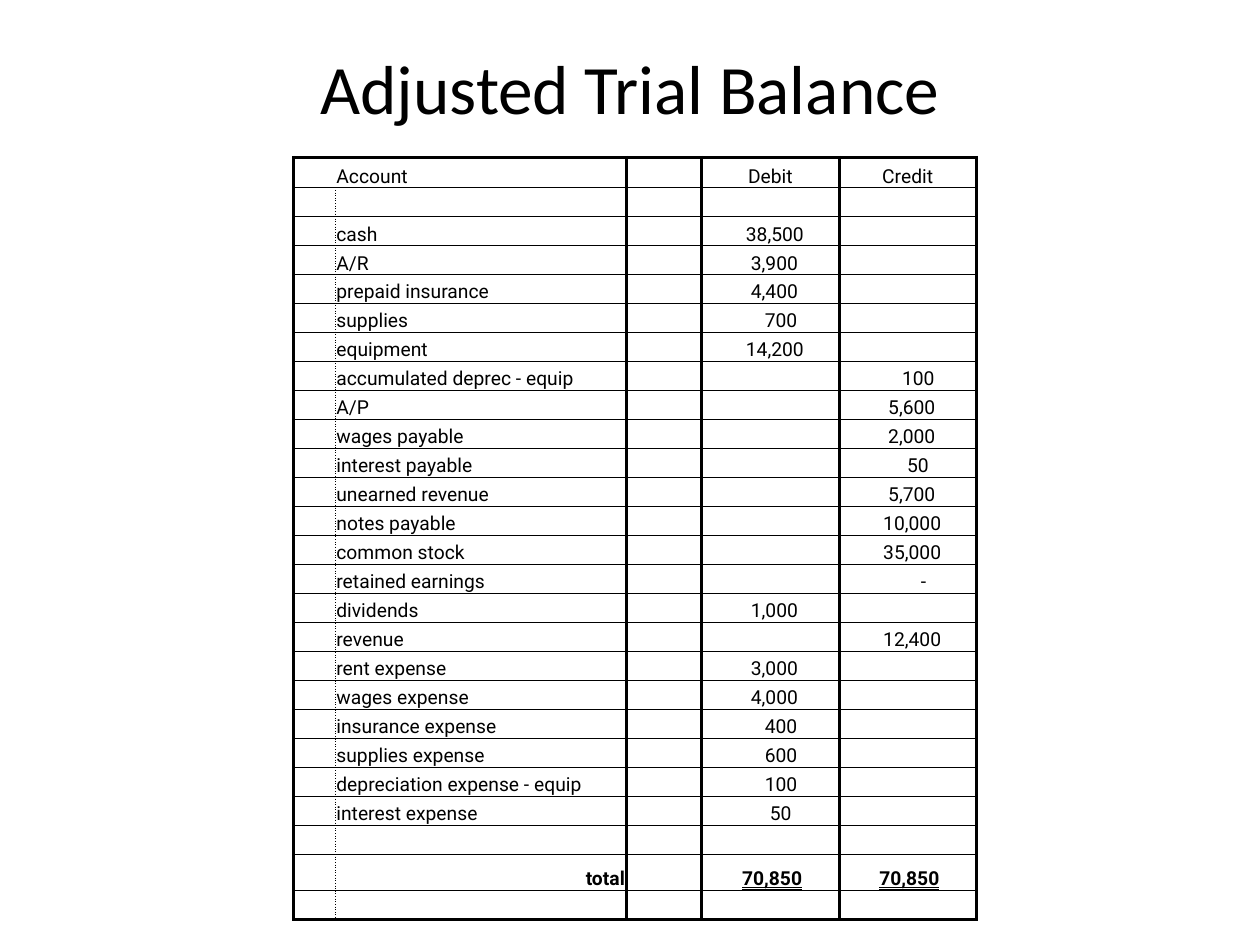
from lxml.etree import SubElement
from pptx import Presentation
from pptx.dml.color import RGBColor
from pptx.enum.text import MSO_ANCHOR, MSO_UNDERLINE, PP_ALIGN
from pptx.oxml.ns import qn
from pptx.util import Inches, Pt

HUES = {"ink": "000000"}
FONTS = {"title": "Calibri", "table": "Roboto"}
WIDTHS = [3.3, 23.1, 6, 10.9, 10.9]
LEADS = {6: 3.5, 5: 3.9, 3: 5, 2: 5.4, 1: 6.5}
TOTAL_LEAD = 3.1
HEAVY, THIN, DOTS, NONE = (2, "solid"), (0.5, "solid"), (0.5, "sysDot"), None
ITEMS = [
    ("cash", "38,500", ""),
    ("A/R", "3,900", ""),
    ("prepaid insurance", "4,400", ""),
    ("supplies", "700", ""),
    ("equipment", "14,200", ""),
    ("accumulated deprec - equip", "", "100"),
    ("A/P", "", "5,600"),
    ("wages payable", "", "2,000"),
    ("interest payable", "", "50"),
    ("unearned revenue", "", "5,700"),
    ("notes payable", "", "10,000"),
    ("common stock", "", "35,000"),
    ("retained earnings", "", "-"),
    ("dividends", "1,000", ""),
    ("revenue", "", "12,400"),
    ("rent expense", "3,000", ""),
    ("wages expense", "4,000", ""),
    ("insurance expense", "400", ""),
    ("supplies expense", "600", ""),
    ("depreciation expense - equip", "100", ""),
    ("interest expense", "50", ""),
]
BLANK = ("", "", "")
ROWS = [("Account", "Debit", "Credit"), BLANK, *ITEMS, BLANK, ("total", "70,850", "70,850"), BLANK]
TOTAL = len(ROWS) - 2
HEIGHTS = [2.4] + [2.3] * (TOTAL - 1) + [2.9, 2.3]


class Sheet:
    """Hold the style and the slide, laid out on a grid of 100 columns and 75 rows."""

    def __init__(self, deck):
        self.slide = deck.slides.add_slide(deck.slide_layouts[6])
        self.col = deck.slide_width / 100
        self.row = deck.slide_height / 75

    def place(self, left, top, width, height):
        return [int(n) for n in (left * self.col, top * self.row, width * self.col, height * self.row)]

    def text(self, para, words, font, size, bold=False):
        run = para.add_run()
        run.text = words
        run.font.name, run.font.size, run.font.bold = FONTS[font], Pt(size), bold
        run.font.color.rgb = RGBColor.from_string(HUES["ink"])
        return run

    def title(self, words, *spot):
        frame = self.slide.shapes.add_textbox(*self.place(*spot)).text_frame
        frame.word_wrap = True
        frame.vertical_anchor = MSO_ANCHOR.MIDDLE
        para = frame.paragraphs[0]
        para.alignment = PP_ALIGN.CENTER
        self.text(para, words, "title", 39.6)

    def rule(self, cell, side, style):
        line = SubElement(cell._tc.get_or_add_tcPr(), qn(f"a:ln{side}"))
        if style is NONE:
            SubElement(line, qn("a:noFill"))
            return
        width, dash = style
        line.set("w", str(Pt(width)))
        fill = SubElement(line, qn("a:solidFill"))
        SubElement(fill, qn("a:srgbClr"), val=HUES["ink"])
        SubElement(line, qn("a:prstDash"), val=dash)

    def frame(self, cell, row, col):
        split = DOTS if row else NONE
        self.rule(cell, "L", split if col == 1 else HEAVY)
        self.rule(cell, "R", split if col == 0 else HEAVY)
        self.rule(cell, "T", THIN if row else HEAVY)
        self.rule(cell, "B", HEAVY if row == len(ROWS) - 1 else THIN)
        cell.fill.background()

    def fill(self, cell, words, row, col):
        cell.vertical_anchor = MSO_ANCHOR.BOTTOM
        cell.margin_left = cell.margin_right = cell.margin_top = Inches(0.01)
        cell.margin_bottom = 0
        para = cell.text_frame.paragraphs[0]
        if not words:
            SubElement(para._p, qn("a:endParaRPr"), sz="1100")
            return
        total, money = row == TOTAL, row > 0 and col > 1
        if total and money:
            tabs = SubElement(para._p.get_or_add_pPr(), qn("a:tabLst"))
            SubElement(tabs, qn("a:tab"), pos=str(int(TOTAL_LEAD * self.col)), algn="l")
            words = "\t" + words
        elif money:
            cell.margin_left = int(LEADS[len(words)] * self.col)
        elif total:
            para.alignment = PP_ALIGN.RIGHT
        elif col > 1:
            para.alignment = PP_ALIGN.CENTER
        run = self.text(para, words, "table", 11, total)
        if total and money:
            run.font.underline = MSO_UNDERLINE.DOUBLE_LINE

    def table(self, left, top):
        spot = self.place(left, top, sum(WIDTHS), sum(HEIGHTS))
        grid = self.slide.shapes.add_table(len(ROWS), len(WIDTHS), *spot).table
        grid.first_row = grid.horz_banding = False
        for col, width in zip(grid.columns, WIDTHS):
            col.width = int(width * self.col)
        for row, height in zip(grid.rows, HEIGHTS):
            row.height = int(height * self.row)
        for row, (name, debit, credit) in enumerate(ROWS):
            for col, words in enumerate(("", name, "", debit, credit)):
                cell = grid.cell(row, col)
                self.frame(cell, row, col)
                self.fill(cell, words, row, col)


def main():
    deck = Presentation()
    deck.slide_width, deck.slide_height = Inches(10), Inches(7.5)
    sheet = Sheet(deck)
    sheet.title("Adjusted Trial Balance", 5, 3, 90, 7.8)
    sheet.table(23.3, 12.5)
    deck.save("out.pptx")


if __name__ == "__main__":
    main()
